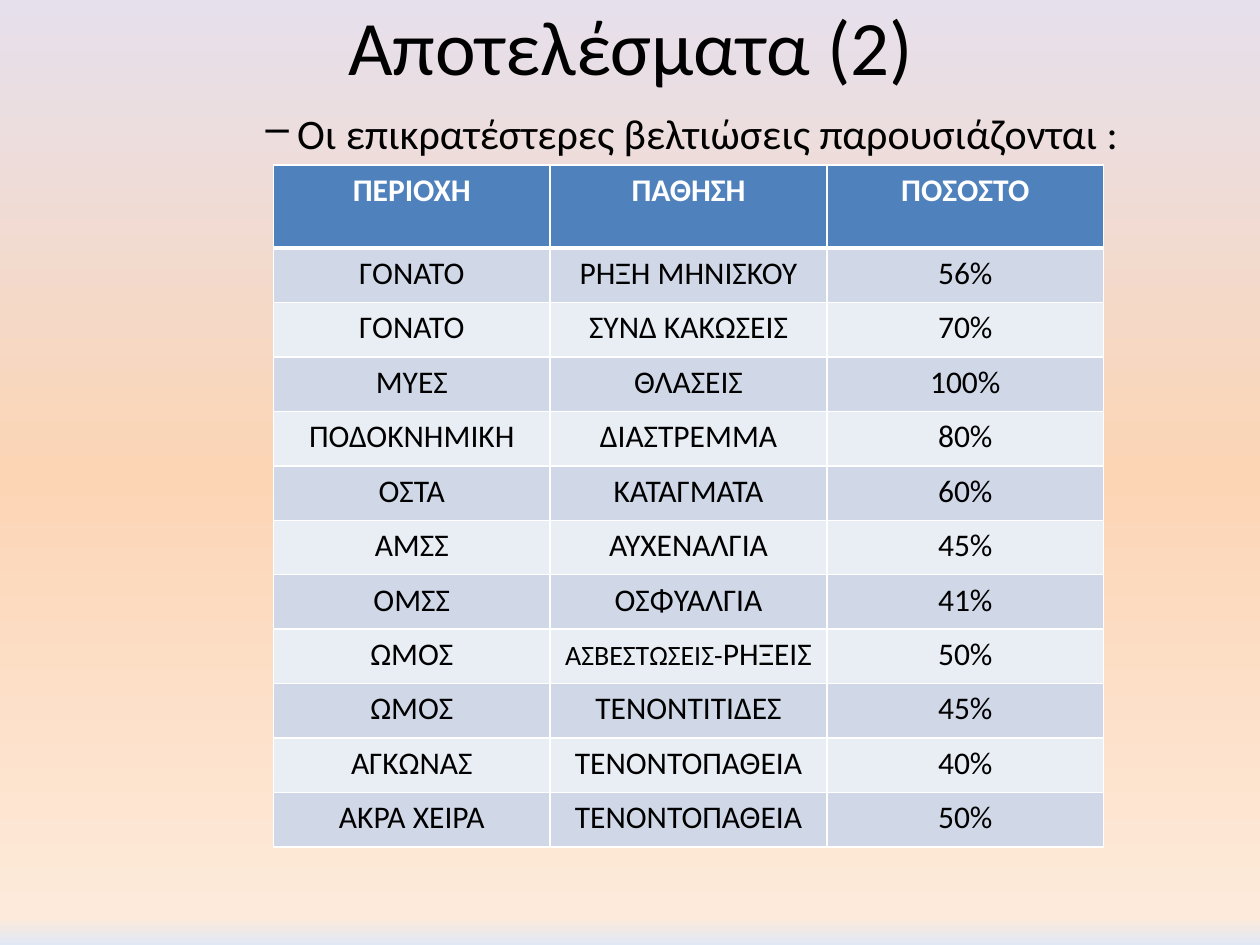
from lxml import etree
from pptx import Presentation
from pptx.dml.color import RGBColor
from pptx.enum.text import MSO_ANCHOR, PP_ALIGN
from pptx.oxml import parse_xml
from pptx.oxml.ns import nsdecls, qn
from pptx.util import Inches, Pt

BACKGROUND = [(0, "E6E0EC"), (50, "FCD5B5"), (97, "FDEADA"), (100, "E1E8F5")]
BANDS = ["D0D8E8", "E9EDF4"]
ROWS = [
    ("ΠΕΡΙΟΧΗ", "ΠΑΘΗΣΗ", "ΠΟΣΟΣΤΟ"),
    ("ΓΟΝΑΤΟ", "ΡΗΞΗ ΜΗΝΙΣΚΟΥ", "56%"),
    ("ΓΟΝΑΤΟ", "ΣΥΝΔ ΚΑΚΩΣΕΙΣ", "70%"),
    ("ΜΥΕΣ", "ΘΛΑΣΕΙΣ", "100%"),
    ("ΠΟΔΟΚΝΗΜΙΚΗ", "ΔΙΑΣΤΡΕΜΜΑ", "80%"),
    ("ΟΣΤΑ", "ΚΑΤΑΓΜΑΤΑ", "60%"),
    ("ΑΜΣΣ", "ΑΥΧΕΝΑΛΓΙΑ", "45%"),
    ("ΟΜΣΣ", "ΟΣΦΥΑΛΓΙΑ", "41%"),
    ("ΩΜΟΣ", "ΑΣΒΕΣΤΩΣΕΙΣ-ΡΗΞΕΙΣ", "50%"),
    ("ΩΜΟΣ", "ΤΕΝΟΝΤΙΤΙΔΕΣ", "45%"),
    ("ΑΓΚΩΝΑΣ", "ΤΕΝΟΝΤΟΠΑΘΕΙΑ", "40%"),
    ("ΑΚΡΑ ΧΕΙΡΑ", "ΤΕΝΟΝΤΟΠΑΘΕΙΑ", "50%"),
]


def rgb(color):
    return RGBColor.from_string(color)


def style(p, size, color="000000", bold=False, align=PP_ALIGN.CENTER):
    p.alignment = align
    p.font.name = "Calibri"
    p.font.size = Pt(size)
    p.font.bold = bold
    p.font.color.rgb = rgb(color)


def set_background(s):
    fill = s.background.fill
    fill.gradient()
    fill.gradient_angle = 270
    stops = s.background._cSld.find(".//" + qn("a:gsLst"))
    for stop in list(stops):
        stops.remove(stop)
    for pos, color in BACKGROUND:
        stop = etree.SubElement(stops, qn("a:gs"), pos=str(pos * 1000))
        etree.SubElement(stop, qn("a:srgbClr"), val=color)


def set_title(s, text):
    sp = s.shapes.title
    sp.left, sp.top, sp.width, sp.height = map(Inches, (0.51, -0.27, 9, 1.25))
    tf = sp.text_frame
    tf.text = text
    tf.vertical_anchor = MSO_ANCHOR.MIDDLE
    style(tf.paragraphs[0], 44)


def add_dash_item(s, text):
    sp = s.shapes.add_textbox(*map(Inches, (0.51, 0.68, 9, 0.6)))
    tf = sp.text_frame
    tf.word_wrap = True
    tf.margin_top = Inches(0.17)
    p = tf.paragraphs[0]
    p.text = text
    style(p, 24, align=PP_ALIGN.LEFT)
    pPr = p._p.get_or_add_pPr()
    pPr.set("marL", str(Inches(1.75)))
    pPr.set("indent", str(Inches(-0.25)))
    pPr.insert(0, parse_xml(f'<a:buChar {nsdecls("a")} char="–"/>'))


def set_borders(cell, bottom):
    tcPr = cell._tc.get_or_add_tcPr()
    widths = {"lnL": 1, "lnR": 1, "lnT": 1, "lnB": bottom}
    for i, (side, width) in enumerate(widths.items()):
        tcPr.insert(i, parse_xml(
            f'<a:{side} {nsdecls("a")} w="{Pt(width)}"><a:solidFill>'
            f'<a:srgbClr val="FFFFFF"/></a:solidFill></a:{side}>'))


def fill_cell(cell, text, row):
    header = row == 0
    p = cell.text_frame.paragraphs[0]
    style(p, 18, "FFFFFF" if header else "000000", header)
    head, dash, tail = text.rpartition("-")
    if dash:
        r = p.add_run()
        r.text = head + dash
        r.font.size = Pt(16)
    p.add_run().text = tail
    cell.fill.solid()
    cell.fill.fore_color.rgb = rgb("4F81BD" if header else BANDS[(row - 1) % 2])
    set_borders(cell, 3 if row < 1 else 1)


def add_results(s):
    frame = s.shapes.add_table(len(ROWS), 3, *map(Inches, (2.17, 1.31, 6.59, 5.41)))
    table = frame.table
    for i, row in enumerate(ROWS):
        table.rows[i].height = Inches(0.432 if i else 0.66)
        for j, text in enumerate(row):
            fill_cell(table.cell(i, j), text, i)


def main():
    prs = Presentation()
    prs.slide_width, prs.slide_height = Inches(10), Inches(7.5)
    s = prs.slides.add_slide(prs.slide_layouts[5])
    set_background(s)
    set_title(s, "Αποτελέσματα (2)")
    add_dash_item(s, "Οι επικρατέστερες βελτιώσεις παρουσιάζονται :")
    add_results(s)
    prs.save("out.pptx")


if __name__ == "__main__":
    main()
